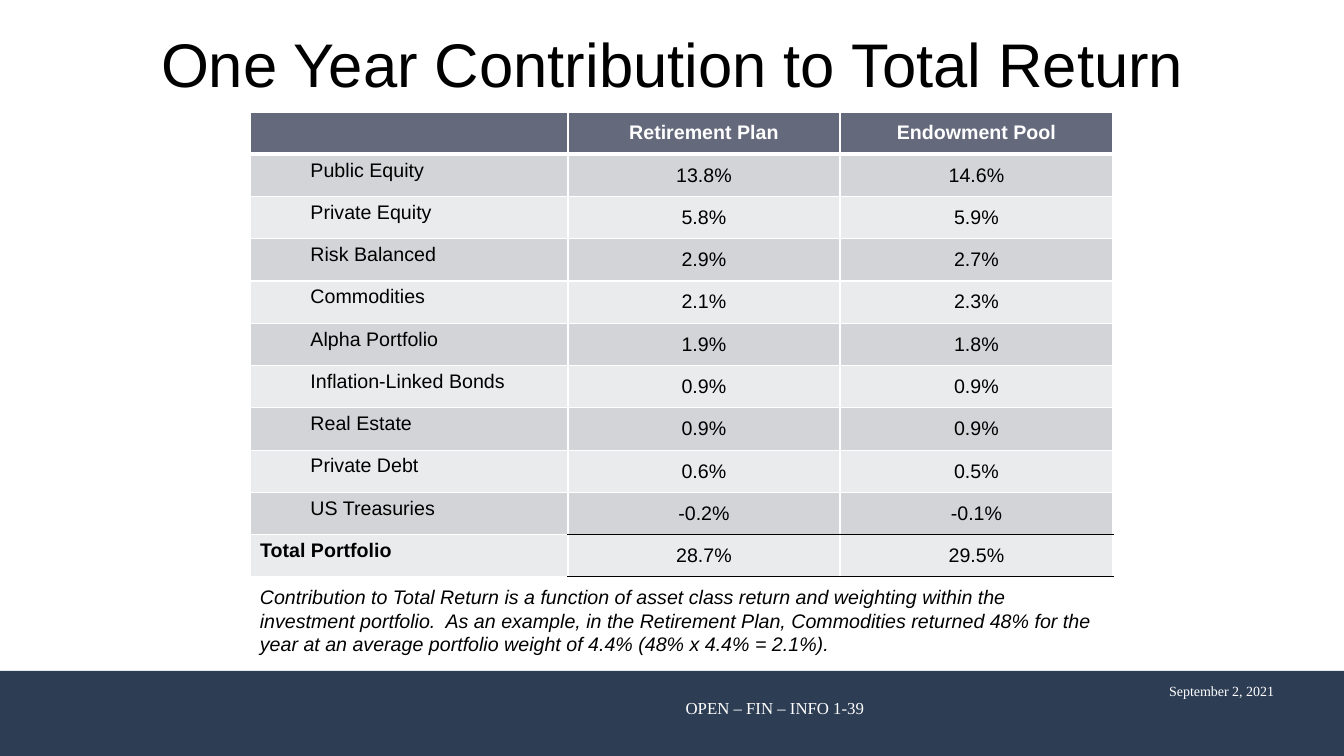
from lxml import etree
from pptx import Presentation
from pptx.dml.color import RGBColor
from pptx.enum.shapes import MSO_SHAPE
from pptx.enum.text import MSO_ANCHOR, PP_ALIGN
from pptx.oxml.ns import qn
from pptx.util import Pt

RECTANGLE = MSO_SHAPE.RECTANGLE
TOP, MIDDLE = MSO_ANCHOR.TOP, MSO_ANCHOR.MIDDLE
LEFT, CENTER, RIGHT = PP_ALIGN.LEFT, PP_ALIGN.CENTER, PP_ALIGN.RIGHT

# Content
TITLE = "One Year Contribution to Total Return"
RETURNS = [
    ("", "Retirement Plan", "Endowment Pool"),
    ("Public Equity", "13.8%", "14.6%"),
    ("Private Equity", "5.8%", "5.9%"),
    ("Risk Balanced", "2.9%", "2.7%"),
    ("Commodities", "2.1%", "2.3%"),
    ("Alpha Portfolio", "1.9%", "1.8%"),
    ("Inflation-Linked Bonds", "0.9%", "0.9%"),
    ("Real Estate", "0.9%", "0.9%"),
    ("Private Debt", "0.6%", "0.5%"),
    ("US Treasuries", "-0.2%", "-0.1%"),
    ("Total Portfolio", "28.7%", "29.5%"),
]
NOTE = (
    "Contribution to Total Return is a function of asset class return and "
    "weighting within the investment portfolio.  As an example, in the "
    "Retirement Plan, Commodities returned 48% for the year at an average "
    "portfolio weight of 4.4% (48% x 4.4% = 2.1%)."
)
DATE = "September 2, 2021"
FOOTER = "OPEN – FIN – INFO 1-39"

# Style
SANS, SERIF = "Arial", "Times New Roman"
BLACK, WHITE = "000000", "FFFFFF"
NAVY, SLATE = "2D3D54", "64697C"
BANDS = ("EAEBEC", "D3D4D7")

# Layout in px
SLIDE_WIDTH, SLIDE_HEIGHT = 1344, 756
FOOTER_TOP = 671
TABLE_LEFT, TABLE_TOP, TABLE_HEIGHT = 250, 112, 465
COLUMN_WIDTHS = (318, 272, 273)


def px(length):
    return round(length * 914400 / 100.8)


def color(hex_value):
    return RGBColor.from_string(hex_value)


def style(paragraph, size, font_name, hex_value, align=LEFT, bold=False, italic=False):
    paragraph.alignment = align
    font = paragraph.font
    font.size, font.name = Pt(size), font_name
    font.bold, font.italic = bold, italic
    font.color.rgb = color(hex_value)


def add_text(slide, box, text, *text_style, anchor=TOP, **options):
    frame = slide.shapes.add_textbox(*map(px, box)).text_frame
    frame.word_wrap = True
    frame.vertical_anchor = anchor
    paragraph = frame.paragraphs[0]
    paragraph.text = text
    style(paragraph, *text_style, **options)


def add_borders(cell, top, bottom):
    properties = cell._tc.get_or_add_tcPr()
    sides = {"lnL": (WHITE, 1), "lnR": (WHITE, 1), "lnT": top, "lnB": bottom}
    for position, (tag, (hex_value, width)) in enumerate(sides.items()):
        line = etree.Element(qn(f"a:{tag}"), w=str(Pt(width)))
        fill = etree.SubElement(line, qn("a:solidFill"))
        etree.SubElement(fill, qn("a:srgbClr"), val=hex_value)
        properties.insert(position, line)


def rule_above(row, column):
    """Colour and width of the line on top of a cell."""
    if row == 1:
        return WHITE, 3
    if row >= len(RETURNS) - 1 and column > 0:
        return BLACK, 1
    return WHITE, 1


def add_returns_table(slide):
    last = len(RETURNS) - 1
    frame = slide.shapes.add_table(
        len(RETURNS), len(COLUMN_WIDTHS), px(TABLE_LEFT), px(TABLE_TOP),
        px(sum(COLUMN_WIDTHS)), px(TABLE_HEIGHT))
    table = frame.table
    for column, width in zip(table.columns, COLUMN_WIDTHS):
        column.width = px(width)
    for row, values in enumerate(RETURNS):
        for column, value in enumerate(values):
            cell = table.cell(row, column)
            cell.fill.solid()
            cell.fill.fore_color.rgb = color(BANDS[row % 2] if row else SLATE)
            add_borders(cell, rule_above(row, column), rule_above(row + 1, column))
            cell.vertical_anchor = MIDDLE if column else TOP
            paragraph = cell.text_frame.paragraphs[0]
            paragraph.text = value
            if column == 0 and 0 < row < last:
                paragraph.level = 1
            style(paragraph, 14, SANS, BLACK if row else WHITE,
                  align=CENTER if column else LEFT,
                  bold=row == 0 or (row == last and column == 0))


def main():
    presentation = Presentation()
    presentation.slide_width = px(SLIDE_WIDTH)
    presentation.slide_height = px(SLIDE_HEIGHT)
    slide = presentation.slides.add_slide(presentation.slide_layouts[6])

    # Footer band
    band = slide.shapes.add_shape(
        RECTANGLE, 0, px(FOOTER_TOP), px(SLIDE_WIDTH), px(SLIDE_HEIGHT - FOOTER_TOP))
    band.shadow.inherit = False
    band.fill.solid()
    band.fill.fore_color.rgb = color(NAVY)
    band.line.fill.background()
    add_text(slide, (1132, 678, 152, 27), DATE, 10, SERIF, WHITE, align=RIGHT)
    add_text(slide, (672, 693, 206, 30), FOOTER, 12, SERIF, WHITE, align=CENTER)

    # Title, table and note
    add_text(slide, (2, 0, 1342, 126), TITLE, 44, SANS, BLACK,
             align=CENTER, anchor=MIDDLE)
    add_returns_table(slide)
    add_text(slide, (TABLE_LEFT, 580, sum(COLUMN_WIDTHS), 82), NOTE,
             14, SANS, BLACK, italic=True)

    presentation.save("out.pptx")


if __name__ == "__main__":
    main()
